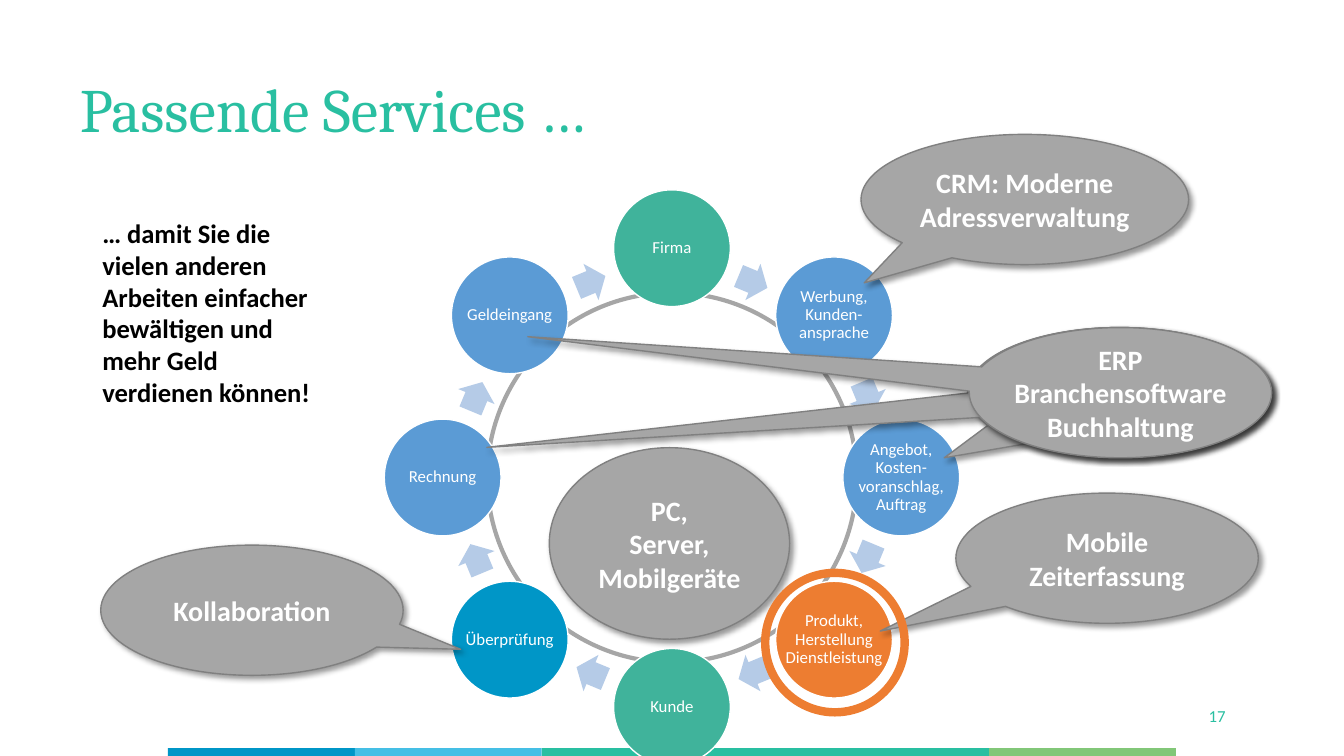
import math

import lxml.etree
import pptx
import pptx.dml.color
import pptx.enum.shapes
import pptx.enum.text
import pptx.oxml.ns
import pptx.util

SHAPE = pptx.enum.shapes.MSO_SHAPE
ALIGN = pptx.enum.text.PP_ALIGN
ANCHOR = pptx.enum.text.MSO_ANCHOR

COLUMNS = 160
ROWS = 90
CELL = pptx.util.Inches(1) / 12

WHITE, BLACK = "FFFFFF", "000000"
GREY, DARK_GREY = "A6A6A6", "808080"
TEAL, GREEN, BLUE, DEEP_BLUE = "29BFA1", "40B39B", "5B9BD5", "0096C7"
ORANGE, PALE_BLUE = "ED7D31", "B5CBE7"


def rgb(value):
    return pptx.dml.color.RGBColor.from_string(value)


def cells(count):
    """Length of a number of grid cells."""
    return pptx.util.Emu(round(count * CELL))


class ServiceSlide:
    """Draws on one slide; boxes are (column, row, columns, rows)."""

    body_font = "Calibri"

    def __init__(self, deck):
        self.slide = deck.slides.add_slide(deck.slide_layouts[6])

    def set_text(self, frame, paragraphs, size, color, font=body_font, bold=False,
                 align=ALIGN.CENTER, anchor=ANCHOR.MIDDLE, spacing=None, wrap=True, inset=None):
        """Fill a text frame; a newline inside a paragraph is a line break."""
        frame.word_wrap = wrap
        frame.vertical_anchor = anchor
        if inset is not None:
            frame.margin_left = frame.margin_right = cells(inset)
            frame.margin_top = frame.margin_bottom = cells(inset)
        for index, content in enumerate(paragraphs):
            paragraph = frame.add_paragraph() if index else frame.paragraphs[0]
            paragraph.text = content.replace("\n", "\v")
            paragraph.alignment = align
            if spacing:
                paragraph.line_spacing = spacing
            paragraph.font.name = font
            paragraph.font.size = pptx.util.Pt(size)
            paragraph.font.bold = bold
            paragraph.font.color.rgb = rgb(color)

    def text(self, box, paragraphs, size, color, **style):
        holder = self.slide.shapes.add_textbox(*map(cells, box))
        self.set_text(holder.text_frame, paragraphs, size, color, **style)

    def shape(self, kind, box, fill=None, line=None, width=1):
        figure = self.slide.shapes.add_shape(kind, *map(cells, box))
        figure.shadow.inherit = False
        if fill:
            figure.fill.solid()
            figure.fill.fore_color.rgb = rgb(fill)
        else:
            figure.fill.background()
        if line:
            figure.line.color.rgb = rgb(line)
            figure.line.width = pptx.util.Pt(width)
        else:
            figure.line.fill.background()
        return figure

    def node(self, center, diameter, label, fill):
        x, y = center
        box = (x - diameter / 2, y - diameter / 2, diameter, diameter)
        circle = self.shape(SHAPE.OVAL, box, fill, WHITE)
        self.set_text(circle.text_frame, [label], 12, WHITE, spacing=0.9, wrap=False, inset=0)

    def arrow(self, center, rotation):
        length, breadth = 3.72, 4.68
        x, y = center
        box = (x - length / 2, y - breadth / 2, length, breadth)
        step = self.shape(SHAPE.RIGHT_ARROW, box, PALE_BLUE)
        step.adjustments[0], step.adjustments[1] = 0.6, 0.5
        step.rotation = rotation

    def bubble(self, box, label, tip=None, inset=None):
        """Shadowed ellipse; tip is the pointer's offset as shares of its size."""
        kind = SHAPE.OVAL_CALLOUT if tip else SHAPE.OVAL
        figure = self.shape(kind, box, GREY, DARK_GREY)
        for index, offset in enumerate(tip or ()):
            figure.adjustments[index] = offset
        self.drop_shadow(figure)
        self.set_text(figure.text_frame, [label], 20, WHITE, bold=True, inset=inset)

    def drop_shadow(self, figure):
        qn = pptx.oxml.ns.qn
        effects = figure.element.spPr.find(qn("a:effectLst"))
        shadow = lxml.etree.SubElement(
            effects, qn("a:outerShdw"), blurRad=str(pptx.util.Pt(4)),
            dist=str(pptx.util.Pt(3)), dir="2700000", algn="tl", rotWithShape="0")
        color = lxml.etree.SubElement(shadow, qn("a:srgbClr"), val=BLACK)
        lxml.etree.SubElement(color, qn("a:alpha"), val="40000")

    def cycle(self, center, steps):
        """Ring of nodes, clockwise from the top, with an arrow after each."""
        def around(radius, degrees):
            angle = math.radians(degrees)
            return (center[0] + radius * math.sin(angle),
                    center[1] - radius * math.cos(angle))

        self.shape(SHAPE.OVAL, (center[0] - 22, center[1] - 22, 44, 44), line=GREY, width=3)
        turn = 360 / len(steps)
        for index, (label, fill) in enumerate(steps):
            self.node(around(27.3, index * turn), 13.9, label, fill)
            halfway = (index + 0.5) * turn
            self.arrow(around(25.2, halfway), halfway)

    def footer(self, number, bands):
        self.text((141.84, 83.4, 6.12, 3.72), [number], 12, TEAL, wrap=False)
        left = 20
        for width, color in bands:
            self.shape(SHAPE.RECTANGLE, (left, 89.05, width, 0.95), color)
            left += width


def main():
    deck = pptx.Presentation()
    deck.slide_width = cells(COLUMNS)
    deck.slide_height = cells(ROWS)
    page = ServiceSlide(deck)

    page.footer("17", [(22.25, DEEP_BLUE), (22.25, "45BFE5"), (53.25, TEAL), (22.25, "82C778")])
    page.cycle((COLUMNS / 2, 56.85), [
        ("Firma", GREEN),
        ("Werbung,\nKunden-\nansprache", BLUE),
        ("Angebot,\nKosten-\nvoranschlag,\nAuftrag", BLUE),
        ("Produkt,\nHerstellung\nDienstleistung", ORANGE),
        ("Kunde", GREEN),
        ("Überprüfung", DEEP_BLUE),
        ("Rechnung", BLUE),
        ("Geldeingang", BLUE),
    ])

    page.bubble((102.5, 16, 39, 15.5), "CRM: Moderne Adressverwaltung", (-0.49, 0.64))
    page.bubble((113.8, 58.7, 36, 15.5), "Mobile Zeiterfassung", (-0.75, 0.56))
    page.bubble((12, 64.9, 36, 15.5), "Kollaboration", (0.69, 0.3))
    page.text((11, 25.2, 29.7, 24.2),
              ["… damit Sie die\nvielen anderen",
               "Arbeiten einfacher bewältigen und mehr Geld verdienen können!"],
              19, BLACK, bold=True, align=ALIGN.LEFT, anchor=ANCHOR.TOP)
    page.bubble((65.4, 53.3, 28.6, 22.8), "PC,\nServer,\nMobilgeräte")
    page.shape(SHAPE.OVAL, (91.1, 68.2, 16.6, 16.6), line=ORANGE, width=6)
    for left, tip in [(115.3, (-0.58, 0.5)), (115.2, (-2.09, 0.42)), (115.4, (-1.96, -0.43))]:
        page.bubble((left, 39, 36, 15.5), "ERP Branchensoftware Buchhaltung", tip, inset=0)

    page.text((9.5, 9.5, 120.5, 9.8), ["Passende Services …"], 44, TEAL, font="Cambria",
              align=ALIGN.LEFT, anchor=ANCHOR.TOP, spacing=0.9, inset=0)
    deck.save("out.pptx")


if __name__ == "__main__":
    main()
